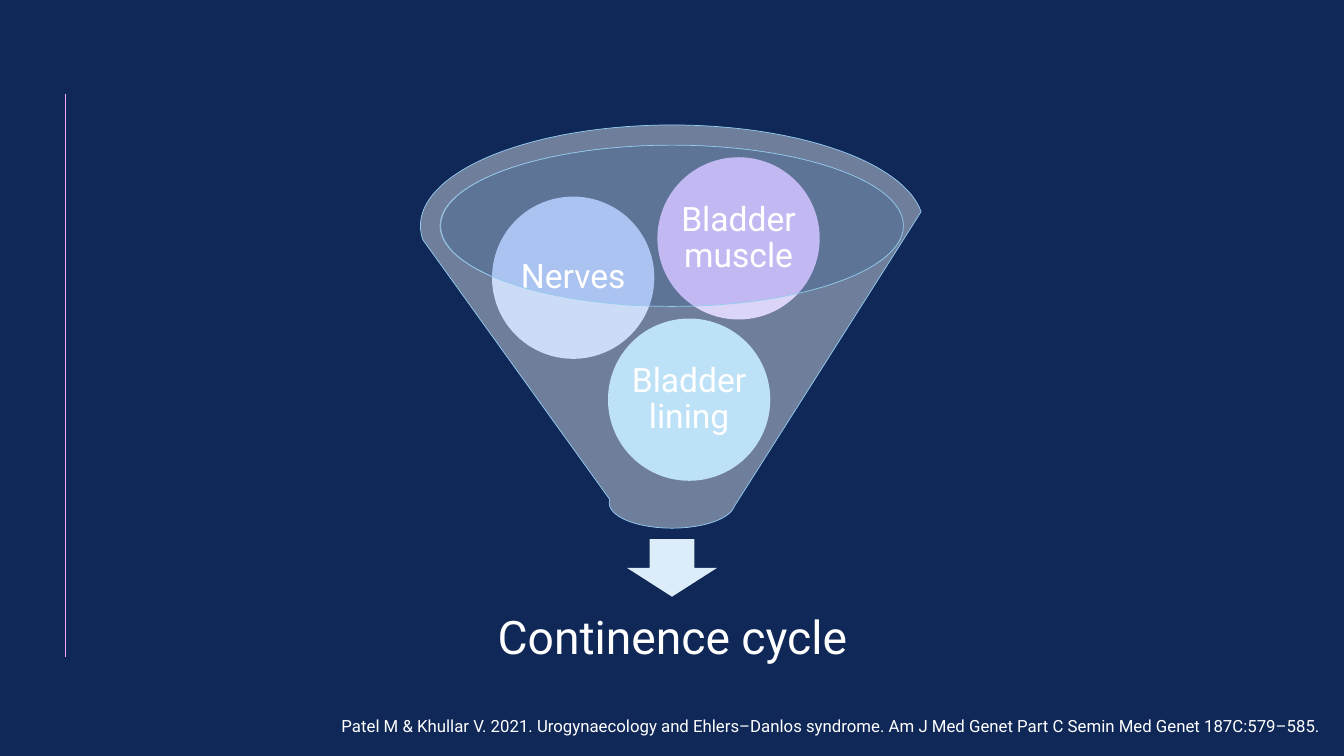
from dataclasses import dataclass

from lxml import etree
from pptx import Presentation
from pptx.dml.color import RGBColor
from pptx.enum.shapes import MSO_CONNECTOR, MSO_SHAPE as Shape
from pptx.enum.text import MSO_ANCHOR as Anchor, PP_ALIGN as Align
from pptx.oxml.ns import qn
from pptx.util import Inches, Pt


@dataclass(frozen=True)
class Theme:
    font: str = "Roboto"
    background: str = "102857"
    text: str = "FFFFFF"
    rule: str = "F6A6F4"
    rim: str = "D2E8F8"
    arrow: str = "DCEDF9"
    funnel: str = "FFFFFF"
    lining: str = "92CDF0"
    nerves: str = "ABC3F0"
    muscle: str = "C3B9F2"
    result_size: int = 33
    label_size: int = 24
    citation_size: int = 12
    line_width: float = 0.5
    glass_opacity: int = 40


class SlideBuilder:
    def __init__(self, prs, theme):
        self.theme = theme
        self.slide = prs.slides.add_slide(prs.slide_layouts[6])
        fill = self.slide.background.fill
        fill.solid()
        fill.fore_color.rgb = RGBColor.from_string(theme.background)

    def shape(self, kind, left, top, width, height, color, opacity=100, outline=None):
        s = self.slide.shapes.add_shape(
            kind, Inches(left), Inches(top), Inches(width), Inches(height))
        s.shadow.inherit = False
        s.fill.solid()
        s.fill.fore_color.rgb = RGBColor.from_string(color)
        if opacity < 100:
            clr = s.fill._xPr.find(qn("a:solidFill"))[0]
            etree.SubElement(clr, qn("a:alpha")).set("val", str(opacity * 1000))
        if outline:
            s.line.color.rgb = RGBColor.from_string(outline)
            s.line.width = Pt(self.theme.line_width)
        else:
            s.line.fill.background()
        return s

    def text(self, text, left, top, width, height, size, align=Align.CENTER,
             anchor=Anchor.MIDDLE, spacing=0.9, insets=(0.03, 0.03)):
        tf = self.slide.shapes.add_textbox(
            Inches(left), Inches(top), Inches(width), Inches(height)).text_frame
        tf.word_wrap = True
        tf.vertical_anchor = anchor
        tf.margin_left = tf.margin_right = Inches(insets[0])
        tf.margin_top = tf.margin_bottom = Inches(insets[1])
        p = tf.paragraphs[0]
        p.text = text
        p.alignment = align
        p.line_spacing = spacing
        p.font.name = self.theme.font
        p.font.size = Pt(size)
        p.font.color.rgb = RGBColor.from_string(self.theme.text)

    def ball(self, label, left, top, color, diameter=1.61):
        self.shape(Shape.OVAL, left, top, diameter, diameter, color)
        self.text(label, left, top, diameter, diameter, self.theme.label_size)

    def rule(self, x, top, bottom):
        s = self.slide.shapes.add_connector(
            MSO_CONNECTOR.STRAIGHT, Inches(x), Inches(top), Inches(x), Inches(bottom))
        s.line.color.rgb = RGBColor.from_string(self.theme.rule)
        s.line.width = Pt(self.theme.line_width)
        etree.SubElement(s._element.spPr, qn("a:effectLst"))


def main():
    prs = Presentation()
    prs.slide_width, prs.slide_height = Inches(13.33), Inches(7.5)
    theme = Theme()
    page = SlideBuilder(prs, theme)

    # Side rule
    page.rule(0.65, 0.93, 6.52)

    # Funnel opening, arrow and result
    page.shape(Shape.OVAL, 4.36, 1.44, 4.6, 1.6, theme.rim, theme.glass_opacity)
    page.shape(Shape.DOWN_ARROW, 6.22, 5.35, 0.89, 0.57, theme.arrow)
    page.text("Continence cycle", 4.53, 5.81, 4.28, 1.07, theme.result_size,
              insets=(0.26, 0.26))

    # Components, seen through the glass of the funnel
    for label, left, top, color in (
        ("Bladder lining", 6.03, 3.16, theme.lining),
        ("Nerves", 4.88, 1.95, theme.nerves),
        ("Bladder muscle", 6.52, 1.56, theme.muscle),
    ):
        page.ball(label, left, top, color)
    page.shape(Shape.FUNNEL, 4.17, 1.24, 4.99, 4, theme.funnel,
               theme.glass_opacity, theme.lining)

    # Citation
    page.text("Patel M & Khullar V. 2021. Urogynaecology and Ehlers–Danlos syndrome. "
              "Am J Med Genet Part C Semin Med Genet 187C:579–585.",
              2.46, 7.05, 10.74, 0.3, theme.citation_size, Align.RIGHT,
              Anchor.TOP, 1.0, (0.1, 0.05))

    prs.save("out.pptx")


if __name__ == "__main__":
    main()
